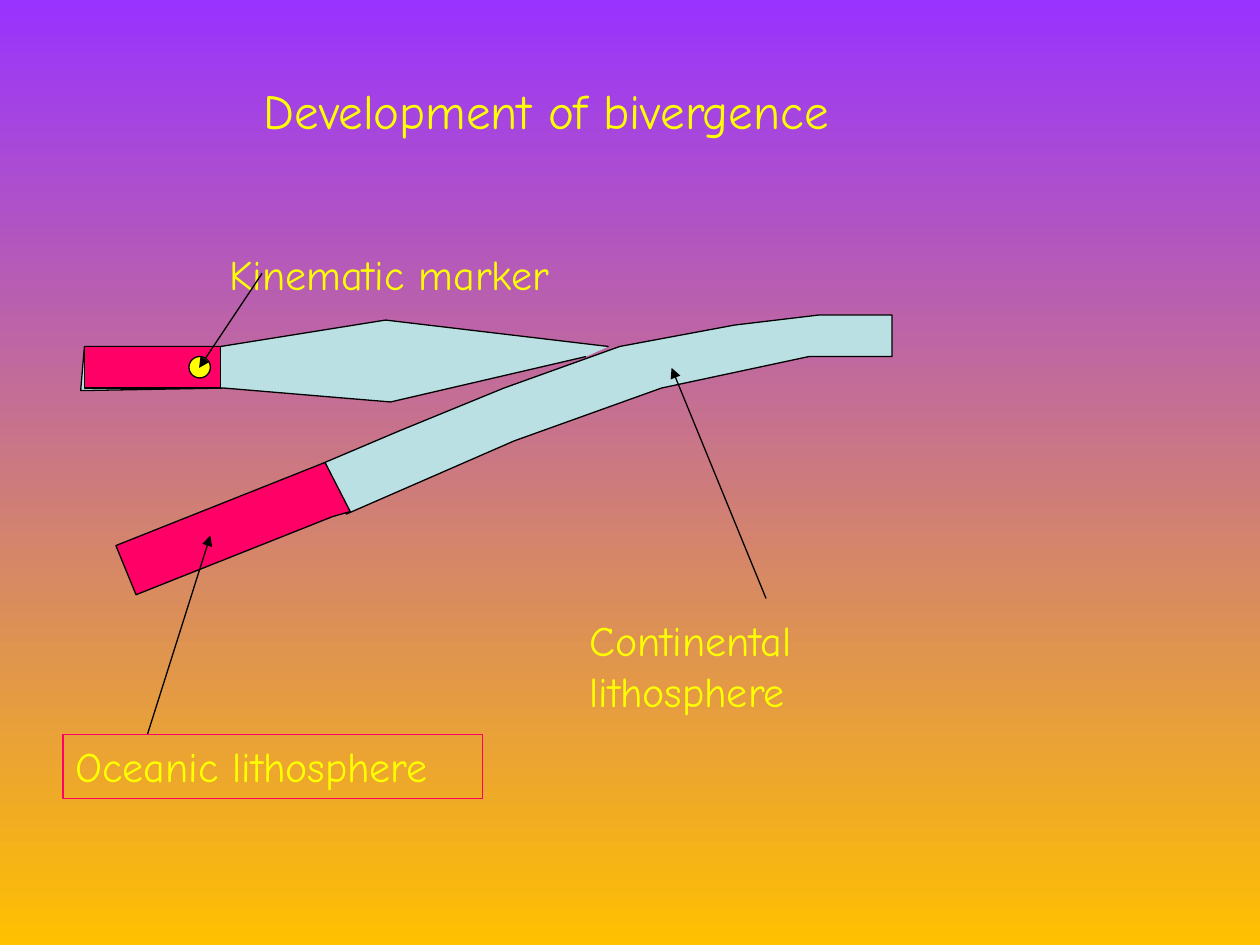
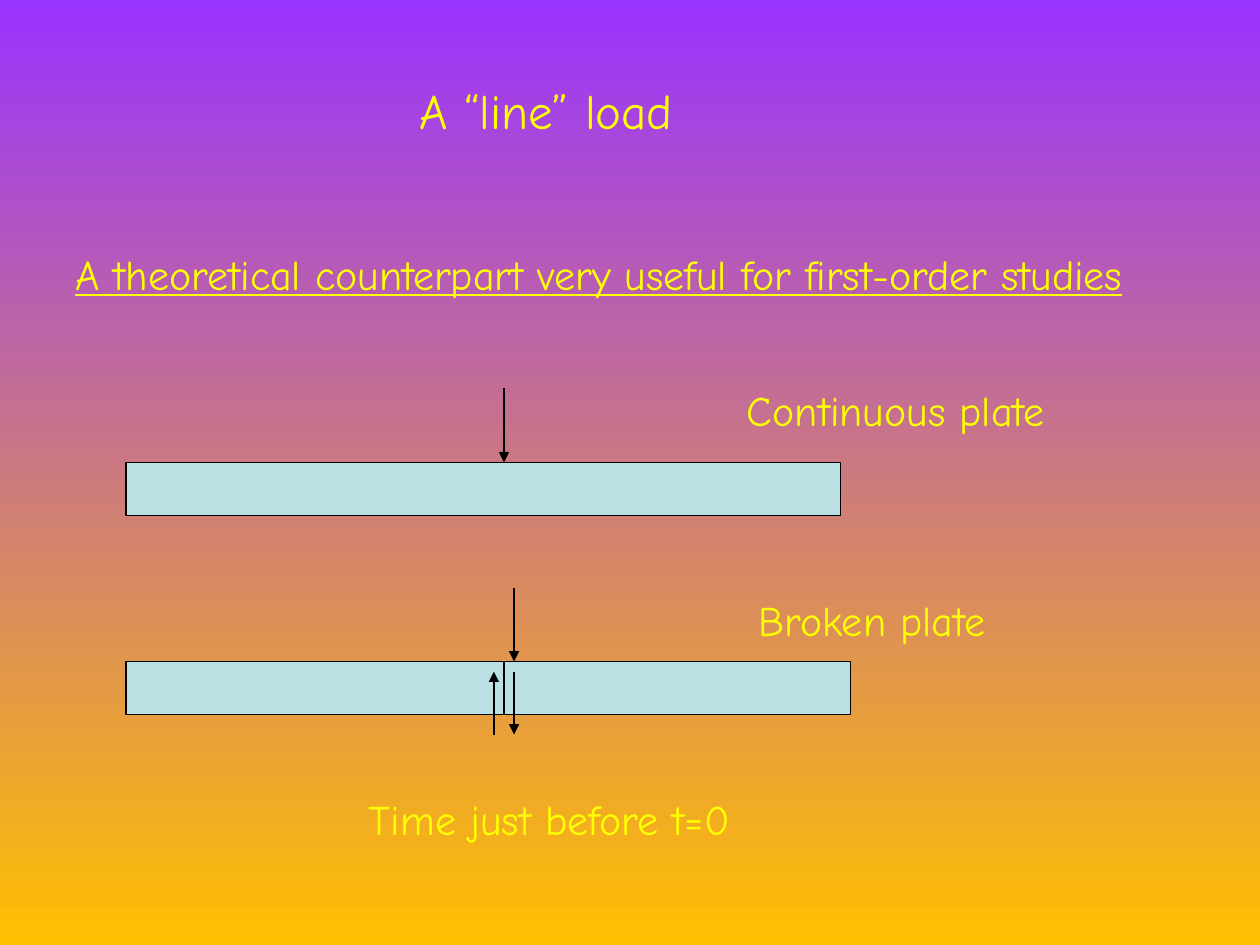
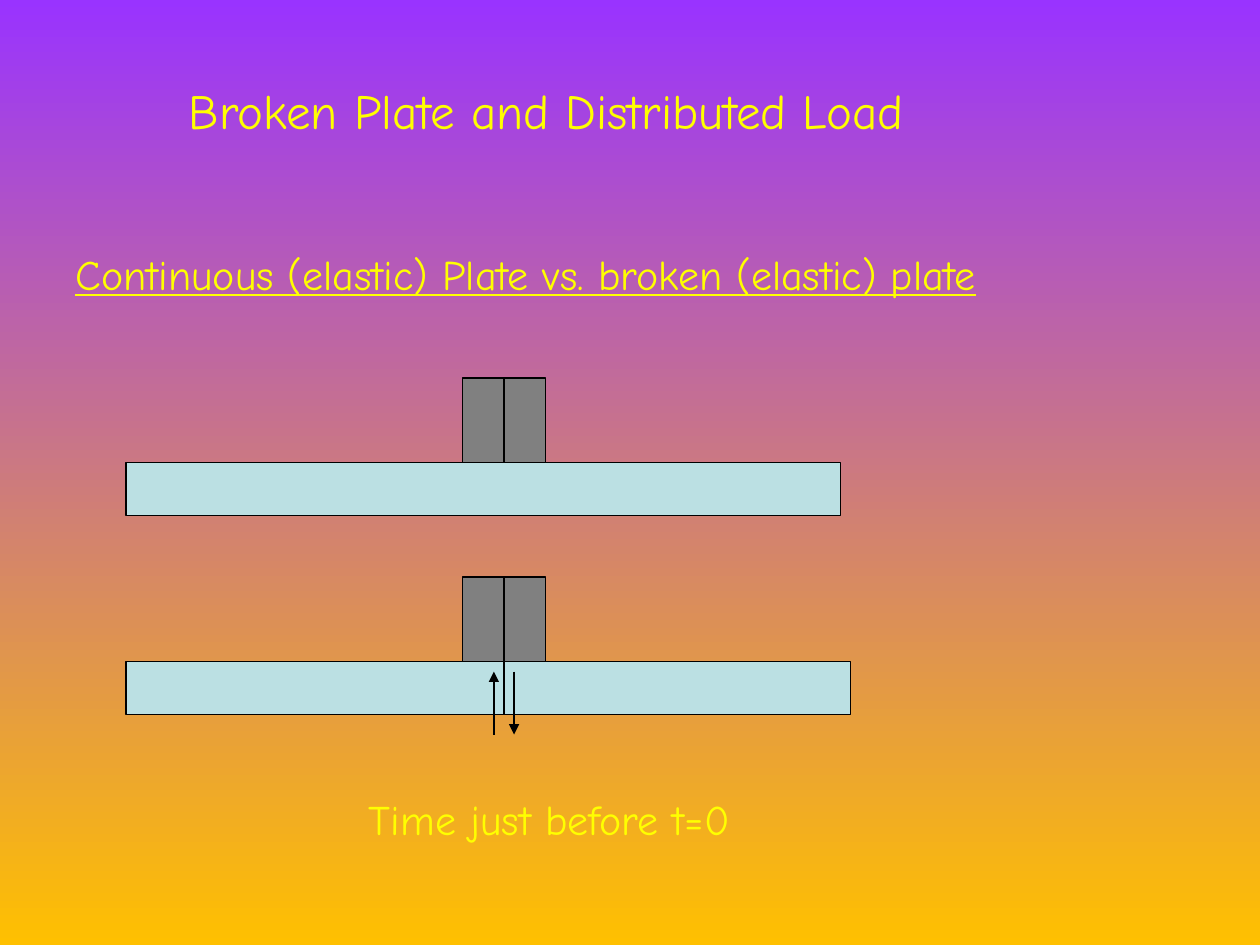
from dataclasses import dataclass

from pptx import Presentation
from pptx.dml.color import RGBColor
from pptx.enum.shapes import MSO_CONNECTOR, MSO_SHAPE
from pptx.enum.text import MSO_ANCHOR, PP_ALIGN
from pptx.oxml.ns import qn
from pptx.util import Inches, Pt
from lxml.etree import SubElement


@dataclass(frozen=True)
class Theme:
    font: str = "Comic Neue"
    top: str = "9933FF"
    base: str = "FFC000"
    text: str = "FFFF00"
    ink: str = "000000"
    land: str = "BBE0E3"
    ocean: str = "FF0066"
    load: str = "808080"
    title: int = 28
    body: int = 24
    line: float = 0.75


THEME = Theme()
TITLE = (0.5, 0.33, 7.67, 1.08)
LEAD = (0.5, 1.92, 9.17, 4.7)
PLATES = (1, 3, 5.75, 2.83)
NOTE = (2.83, 6.25, 3.67, 0.5)


def color(code):
    return RGBColor.from_string(code)


def lengths(*sizes):
    return [Inches(size) for size in sizes]


def paint(shape, fill, line=THEME.ink):
    shape.shadow.inherit = False
    if fill:
        shape.fill.solid()
        shape.fill.fore_color.rgb = color(fill)
    else:
        shape.fill.background()
    shape.line.color.rgb = color(line)
    shape.line.width = Pt(THEME.line)


def block(slide, box, fill, kind=MSO_SHAPE.RECTANGLE, line=THEME.ink):
    shape = slide.shapes.add_shape(kind, *lengths(*box))
    paint(shape, fill, line)
    return shape


def outline(slide, left, top, points, fill, close=True):
    start, *rest = [lengths(left + x, top + y) for x, y in points]
    form = slide.shapes.build_freeform(*start)
    form.add_line_segments(rest, close=close)
    paint(form.convert_to_shape(), fill)


def arrow(slide, left, top, start, end):
    ends = lengths(left + start[0], top + start[1], left + end[0], top + end[1])
    line = slide.shapes.add_connector(MSO_CONNECTOR.STRAIGHT, *ends)
    line.line.color.rgb = color(THEME.ink)
    line.line.width = Pt(THEME.line)
    props = line.element.spPr
    SubElement(props.find(qn("a:ln")), qn("a:tailEnd"), type="triangle")
    SubElement(props, qn("a:effectLst"))


def write(shape, text, size=THEME.body, align=PP_ALIGN.LEFT,
          anchor=MSO_ANCHOR.TOP, under=False):
    frame = shape.text_frame
    frame.word_wrap = True
    frame.vertical_anchor = anchor
    para = frame.paragraphs[0]
    para.text = text
    para.alignment = align
    font = para.font
    font.name = THEME.font
    font.size = Pt(size)
    font.color.rgb = color(THEME.text)
    font.underline = under


def label(slide, box, text, **style):
    write(slide.shapes.add_textbox(*lengths(*box)), text, **style)


def page(deck, title):
    slide = deck.slides.add_slide(deck.slide_layouts[6])
    fill = slide.background.fill
    fill.gradient()
    fill.gradient_angle = 270
    for stop, code in zip(fill.gradient_stops, (THEME.top, THEME.base)):
        stop.color.rgb = color(code)
    label(slide, TITLE, title, size=THEME.title, align=PP_ALIGN.CENTER,
          anchor=MSO_ANCHOR.MIDDLE)
    return slide


def margin(slide, box):
    left, top = box[:2]
    outline(slide, left, top, [
        (6.58, 0.5), (6, 0.5), (5.33, 0.58), (4.42, 0.75), (3.5, 1.08),
        (2.67, 1.42), (2.08, 1.67), (2.25, 2.08), (3.58, 1.5), (4.75, 1.08),
        (5.92, 0.83), (6.58, 0.83)], THEME.land)
    outline(slide, left, top, [
        (2.08, 1.67), (0.42, 2.33), (0.58, 2.72), (2.14, 2.1), (2.28, 2.06)],
        THEME.ocean)
    outline(slide, left, top, [
        (4.33, 0.75), (2.56, 0.54), (1.25, 0.75), (0.17, 0.75), (0.14, 1.1),
        (1.28, 1.08), (2.6, 1.19), (4.15, 0.83)], THEME.land, close=False)
    block(slide, (left + 0.17, top + 0.75, 1.08, 0.33), THEME.ocean)
    block(slide, (left + 1, top + 0.83, 0.17, 0.17), THEME.text, MSO_SHAPE.OVAL)
    arrow(slide, left, top, (5.58, 2.75), (4.83, 0.92))
    label(slide, (left + 4.08, top + 2.83, 2.92, 0.9), "Continental lithosphere")
    arrow(slide, left, top, (0.67, 3.83), (1.17, 2.25))
    ocean = block(slide, (left, top + 3.83, 3.33, 0.51), None, line=THEME.ocean)
    write(ocean, "Oceanic lithosphere")
    arrow(slide, left, top, (1.58, 0.17), (1.08, 0.92))


def plates(slide, box):
    left, top, width = box[:3]
    for x, y, wide in ((0, 0.67, 5.67), (0, 2.25, 3), (3, 2.25, width - 3)):
        block(slide, (left + x, top + y, wide, 0.42), THEME.land)
    arrow(slide, left, top, (2.92, 2.83), (2.92, 2.33))
    arrow(slide, left, top, (3.08, 2.33), (3.08, 2.83))


def forces(slide, box):
    left, top = box[:2]
    arrow(slide, left, top, (3, 0.08), (3, 0.67))
    arrow(slide, left, top, (3.08, 1.67), (3.08, 2.25))
    label(slide, (left + 4.83, top, 3.67, 0.5), "Continuous plate")
    label(slide, (left + 4.92, top + 1.67, 3, 0.5), "Broken plate")


def loads(slide, box):
    left, top = box[:2]
    for y in (0, 1.58):
        for x in (2.67, 3):
            block(slide, (left + x, top + y, 0.33, 0.67), THEME.load)


def study(deck, title, lead, press):
    slide = page(deck, title)
    label(slide, LEAD, lead, under=True)
    plates(slide, PLATES)
    press(slide, PLATES)
    label(slide, NOTE, "Time just before t=0")


def main():
    deck = Presentation()
    deck.slide_width, deck.slide_height = lengths(10, 7.5)
    first = page(deck, "Development of bivergence")
    label(first, (1.72, 1.92, 8.28, 4.7), "Kinematic marker")
    margin(first, (0.5, 2, 6.58, 4.34))
    study(deck, "A “line” load",
          "A theoretical counterpart very useful for first-order studies", forces)
    study(deck, "Broken Plate and Distributed Load",
          "Continuous (elastic) Plate vs. broken (elastic) plate", loads)
    deck.save("out.pptx")


if __name__ == "__main__":
    main()
